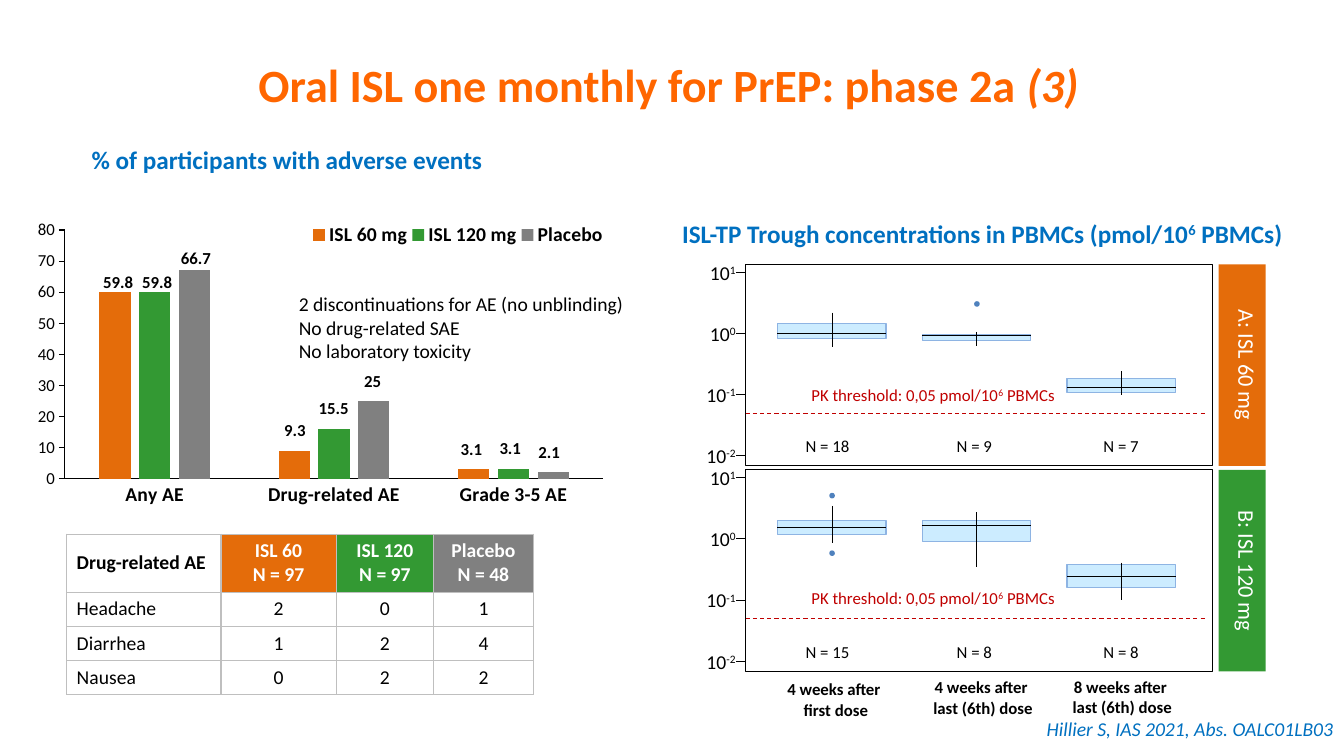
from pptx import Presentation
from pptx.chart.data import CategoryChartData
from pptx.dml.color import RGBColor
from pptx.enum.chart import XL_CHART_TYPE, XL_LEGEND_POSITION, XL_TICK_MARK
from pptx.enum.dml import MSO_LINE
from pptx.enum.shapes import MSO_CONNECTOR, MSO_SHAPE
from pptx.enum.text import MSO_ANCHOR, MSO_AUTO_SIZE, PP_ALIGN
from pptx.oxml import parse_xml
from pptx.oxml.ns import nsdecls
from pptx.util import Cm, Pt

BLACK = RGBColor(0x00, 0x00, 0x00)
WHITE = RGBColor(0xFF, 0xFF, 0xFF)
TITLE_ORANGE = RGBColor(0xFF, 0x66, 0x00)
BLUE = RGBColor(0x00, 0x70, 0xC0)
RED = RGBColor(0xC0, 0x00, 0x00)
ORANGE = RGBColor(0xE4, 0x6C, 0x0A)
GREEN = RGBColor(0x33, 0x99, 0x33)
GRAY = RGBColor(0x80, 0x80, 0x80)
PALE_BLUE = RGBColor(0xCC, 0xEC, 0xFF)
BOX_EDGE = RGBColor(0x8E, 0xB4, 0xE3)
OUTLIER_BLUE = RGBColor(0x4F, 0x81, 0xBD)
FONT = "Calibri"

prs = Presentation()
prs.slide_width, prs.slide_height = Cm(33.87), Cm(19.05)
slide = prs.slides.add_slide(prs.slide_layouts[6])
shapes = slide.shapes


def add_text(left, top, width, height, lines, size, color=BLACK, bold=False,
             italic=False, align=PP_ALIGN.LEFT):
    box = shapes.add_textbox(Cm(left), Cm(top), Cm(width), Cm(height))
    frame = box.text_frame
    frame.word_wrap = False
    frame.auto_size = MSO_AUTO_SIZE.SHAPE_TO_FIT_TEXT
    for number, line in enumerate(lines):
        paragraph = frame.add_paragraph() if number else frame.paragraphs[0]
        paragraph.alignment = align
        for part_number, part in enumerate(line.split("^")):
            run = paragraph.add_run()
            run.text = part
            run.font.name, run.font.size = FONT, Pt(size)
            run.font.bold, run.font.italic = bold, italic
            run.font.color.rgb = color
            if part_number % 2:
                run.font._element.set("baseline", "30000")
    return frame


def add_line(x1, y1, x2, y2, color=BLACK):
    line = shapes.add_connector(MSO_CONNECTOR.STRAIGHT, Cm(x1), Cm(y1), Cm(x2), Cm(y2))
    line.line.color.rgb = color
    line.line.width = Pt(0.75)
    line.element.spPr.append(parse_xml(f"<a:effectLst {nsdecls('a')}/>"))
    return line


title = add_text(5.09, 0.06, 23.52, 4.11, ["Oral ISL one monthly for PrEP: phase 2a "],
                 33, TITLE_ORANGE, bold=True, align=PP_ALIGN.CENTER)
title.auto_size = MSO_AUTO_SIZE.NONE
title.word_wrap = True
title.vertical_anchor = MSO_ANCHOR.MIDDLE
part_three = title.paragraphs[0].add_run()
part_three.text = "(3)"
part_three.font.name, part_three.font.size = FONT, Pt(33)
part_three.font.bold = part_three.font.italic = True
part_three.font.color.rgb = TITLE_ORANGE

add_text(24.08, 17.93, 9.78, 0.86, ["Hillier S, IAS 2021, Abs. OALC01LB03"], 14, BLUE,
         italic=True, align=PP_ALIGN.RIGHT)
add_text(2.06, 3.52, 10.44, 1.02, ["% of participants with adverse events"], 18, BLUE, bold=True)
add_text(16.94, 5.37, 16, 1.02, ["ISL-TP Trough concentrations in PBMCs (pmol/10^6^ PBMCs)"],
         18, BLUE, bold=True)

arms = [("ISL 60 mg", ORANGE, (60, 9, 3)),
        ("ISL 120 mg", GREEN, (60, 16, 3)),
        ("Placebo", GRAY, (67, 25, 2))]
event_data = CategoryChartData()
event_data.categories = ["Any AE", "Drug-related AE", "Grade 3-5 AE"]
for arm, color, rates in arms:
    event_data.add_series(arm, rates)
chart = shapes.add_chart(XL_CHART_TYPE.COLUMN_CLUSTERED, Cm(0.66), Cm(5.36), Cm(14.81),
                         Cm(8.56), event_data).chart
chart.font.name, chart.font.size = FONT, Pt(10)
chart.font.color.rgb = BLACK
chart.has_title = False
bars = chart.plots[0]
bars.gap_width, bars.overlap, bars.vary_by_categories = 219, -27, False
for series, (arm, color, rates) in zip(bars.series, arms):
    series.format.fill.solid()
    series.format.fill.fore_color.rgb = color
events, percent = chart.category_axis, chart.value_axis
events.major_tick_mark = XL_TICK_MARK.NONE
percent.major_tick_mark = XL_TICK_MARK.OUTSIDE
percent.has_major_gridlines = False
percent.minimum_scale, percent.maximum_scale, percent.major_unit = 0, 80, 10
percent.tick_labels.number_format = "0"
percent.tick_labels.number_format_is_linked = False
for axis in (events, percent):
    axis.format.line.color.rgb = BLACK
    axis.format.line.width = Pt(0.75)
chart.has_legend = True
chart.legend.position = XL_LEGEND_POSITION.BOTTOM
chart.legend.include_in_layout = False
for font, size, bold in ((events.tick_labels.font, 14, True),
                         (percent.tick_labels.font, 12, False),
                         (chart.legend.font, 14, True)):
    font.name, font.size, font.bold = FONT, Pt(size), bold
    font.color.rgb = BLACK
for region, index, target, x, y, w, h in (
        ("plotArea", 0, '<c:layoutTarget val="inner"/>', 0.066, 0.051, 0.916, 0.732),
        ("legend", 1, "", 0.482, 0.03, 0.51, 0.07)):
    parent = chart.element.xpath(f"c:chart/c:{region}")[0]
    for layout in parent.xpath("c:layout"):
        parent.remove(layout)
    parent.insert(index, parse_xml(
        f'<c:layout {nsdecls("c")}><c:manualLayout>{target}'
        f'<c:xMode val="edge"/><c:yMode val="edge"/><c:x val="{x:.2f}"/><c:y val="{y:.2f}"/>'
        f'<c:w val="{w:.3f}"/><c:h val="{h:.3f}"/></c:manualLayout></c:layout>'
        if region == "legend" else
        f'<c:layout {nsdecls("c")}><c:manualLayout>{target}'
        f'<c:xMode val="edge"/><c:yMode val="edge"/><c:x val="{x}"/><c:y val="{y}"/>'
        f'<c:w val="{w}"/><c:h val="{h}"/></c:manualLayout></c:layout>'))

add_text(7.28, 7.24, 8.79, 2.06, ["2 discontinuations for AE (no unblinding)",
                                  "No drug-related SAE", "No laboratory toxicity"], 14)
rate_labels = [(("59.8", 6.73), ("9.3", 10.46), ("3.1", 10.92)),
               (("59.8", 6.73), ("15.5", 9.91), ("3.1", 10.9)),
               (("66.7", 6.12), ("25", 9.22), ("2.1", 11))]
for arm_number, arm_labels in enumerate(rate_labels):
    for event_number, (rate, top) in enumerate(arm_labels):
        center = 2.98 + 4.45 * event_number + 0.98 * arm_number
        add_text(center - 0.65, top, 1.3, 0.76, [rate], 12, bold=True,
                 align=PP_ALIGN.CENTER)

ae_rows = [("Drug-related AE", "ISL 60\nN = 97", "ISL 120\nN = 97", "Placebo\nN = 48"),
           ("Headache", "2", "0", "1"),
           ("Diarrhea", "1", "2", "4"),
           ("Nausea", "0", "2", "2")]
ae_table = shapes.add_table(4, 4, Cm(1.68), Cm(13.46), Cm(11.76), Cm(4.04)).table
ae_table.horz_banding = False
for column, width in zip(ae_table.columns, (3.89, 2.9, 2.46, 2.51)):
    column.width = Cm(width)
for row, height in zip(ae_table.rows, (1.46, 0.86, 0.86, 0.86)):
    row.height = Cm(height)
header_fills = (WHITE, ORANGE, GREEN, GRAY)
for row_number, texts in enumerate(ae_rows):
    for column_number, text in enumerate(texts):
        cell = ae_table.cell(row_number, column_number)
        cell.text_frame.text = text
        cell.vertical_anchor = MSO_ANCHOR.MIDDLE
        is_header = row_number == 0
        cell.fill.solid()
        cell.fill.fore_color.rgb = header_fills[column_number] if is_header else WHITE
        for paragraph in cell.text_frame.paragraphs:
            paragraph.alignment = PP_ALIGN.CENTER if column_number else PP_ALIGN.LEFT
            for run in paragraph.runs:
                run.font.name, run.font.size, run.font.bold = FONT, Pt(14), is_header
                run.font.color.rgb = WHITE if is_header and column_number else BLACK
        for index, side in enumerate("LRTB"):
            cell._tc.get_or_add_tcPr().insert(index, parse_xml(
                f'<a:ln{side} {nsdecls("a")} w="12700"><a:solidFill>'
                f'<a:srgbClr val="BFBFBF"/></a:solidFill></a:ln{side}>'))

AXIS_X = 18.79
panels = [
    (6.66, "A: ISL 60 mg", ORANGE, 2.92,
     [("N = 18", 1.5, 0.36, 1.75, 1.22, 2.08, []),
      ("N = 9", 1.78, 0.13, 1.8, 1.7, 2.06, [1]),
      ("N = 7", 2.87, 0.36, 3.1, 2.69, 3.3, [])]),
    (11.84, "B: ISL 120 mg", GREEN, 2.84,
     [("N = 15", 1.27, 0.36, 1.45, 0.91, 1.85, [0.65, 2.1]),
      ("N = 8", 1.27, 0.53, 1.4, 1.07, 2.46, []),
      ("N = 8", 2.39, 0.58, 2.69, 2.34, 3.28, [])])]
for panel_top, dose, dose_color, threshold_top, visits in panels:
    outlines = [(MSO_SHAPE.RECTANGLE, AXIS_X, 0, 11.76, 5.08, None, BLACK),
                (MSO_SHAPE.RECTANGLE, 30.71, 0, 1.19, 5.08, dose_color, None)]
    for visit, (count, top, height, median, high, low, outliers) in enumerate(visits):
        left = 19.59 + 3.65 * visit
        outlines.append((MSO_SHAPE.RECTANGLE, left, top, 2.74, height, PALE_BLUE, BOX_EDGE))
        outlines += [(MSO_SHAPE.OVAL, left + 1.31, y - 0.07, 0.14, 0.14, OUTLIER_BLUE, None)
                     for y in outliers]
    for kind, left, top, width, height, fill, edge in outlines:
        outline = shapes.add_shape(kind, Cm(left), Cm(panel_top + top), Cm(width), Cm(height))
        outline.shadow.inherit = False
        if fill is None:
            outline.fill.background()
        else:
            outline.fill.solid()
            outline.fill.fore_color.rgb = fill
        if edge is None:
            outline.line.fill.background()
        else:
            outline.line.color.rgb = edge
            outline.line.width = Pt(0.75)
        if fill == dose_color:
            outline.text_frame.text = dose
            outline.text_frame.vertical_anchor = MSO_ANCHOR.TOP
            outline.element.txBody.bodyPr.set("vert", "vert")
            dose_line = outline.text_frame.paragraphs[0]
            dose_line.alignment = PP_ALIGN.CENTER
            dose_font = dose_line.runs[0].font
            dose_font.name, dose_font.size = FONT, Pt(16)
            dose_font.color.rgb = WHITE
    for visit, (count, top, height, median, high, low, outliers) in enumerate(visits):
        left = 19.59 + 3.65 * visit
        middle = left + 1.38
        add_line(left, panel_top + median, left + 2.74, panel_top + median)
        add_line(middle, panel_top + high, middle, panel_top + low)
        add_text(20.04 + 3.7 * visit, panel_top + 4.2, 1.63, 0.76, [count], 12,
                 align=PP_ALIGN.CENTER)
    threshold = add_line(AXIS_X, panel_top + 3.75, 30.43, panel_top + 3.75, RED)
    threshold.line.dash_style = MSO_LINE.DASH
    add_text(20.2, panel_top + threshold_top, 6.81, 0.76,
             ["PK threshold: 0,05 pmol/10^6^ PBMCs"], 12, RED)
    for step, (exponent, width) in enumerate((("1", 1.19), ("0", 1.19), ("-1", 1.35), ("-2", 1.3))):
        tick_y = panel_top + 0.2 + 1.54 * step
        add_line(AXIS_X - 0.23, tick_y, AXIS_X, tick_y)
        add_text(AXIS_X - width, tick_y - 0.42, width, 0.86, [f"10^{exponent}"], 14,
                 align=PP_ALIGN.RIGHT)

for left, top, week, dose in ((19.54, 16.99, "4 weeks after", "first dose"),
                              (23.25, 16.94, "4 weeks after", "last (6th) dose"),
                              (26.76, 16.92, "8 weeks after", "last (6th) dose")):
    add_text(left, top, 3.05, 1.27, [week + " ", dose], 12, bold=True, align=PP_ALIGN.CENTER)

prs.save("out.pptx")
